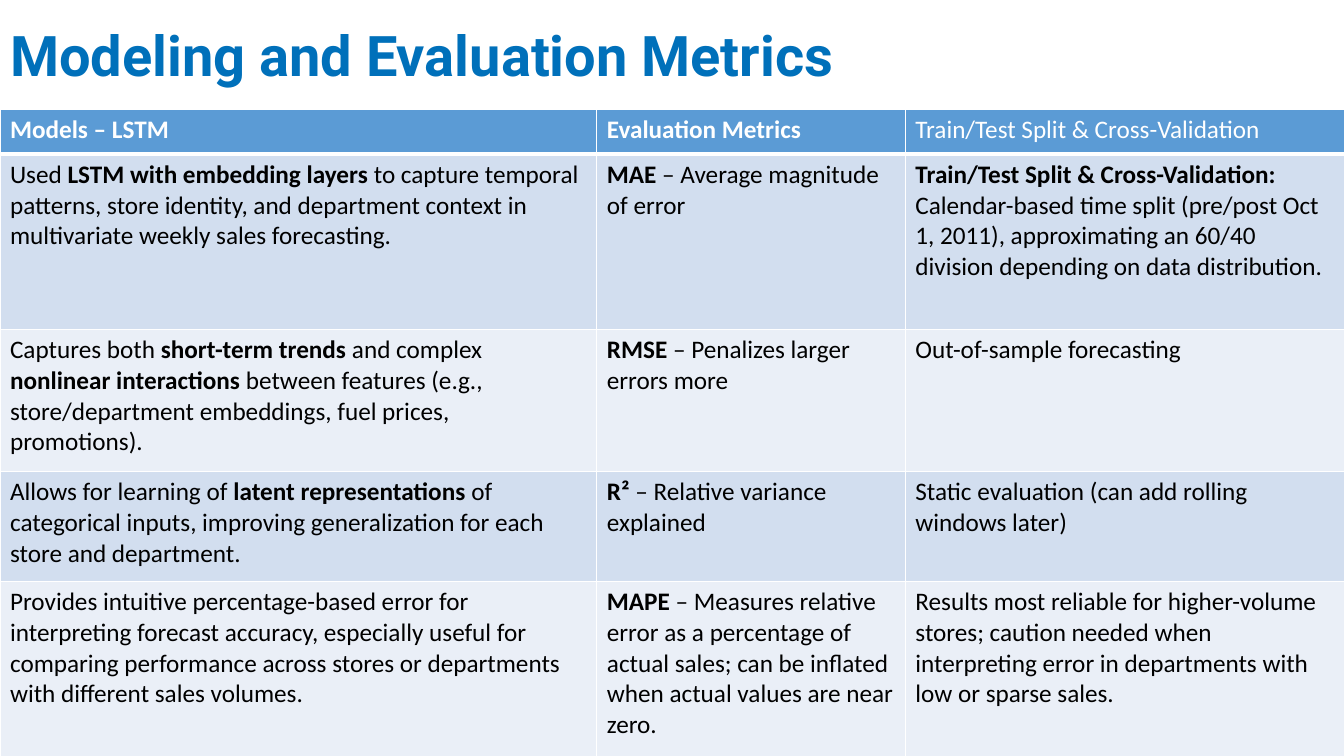
from dataclasses import dataclass

from lxml.etree import SubElement
from pptx import Presentation
from pptx.dml.color import RGBColor
from pptx.enum.text import MSO_ANCHOR, MSO_AUTO_SIZE, PP_ALIGN
from pptx.oxml.ns import qn
from pptx.slide import Slide
from pptx.table import _Cell
from pptx.text.text import Font, _Paragraph
from pptx.util import Inches, Pt

WHITE, BLACK, TITLE_BLUE = "FFFFFF", "000000", "0070BA"
HEADER_BLUE, BAND_DARK, BAND_LIGHT = "5B9BD5", "D2DEEF", "EAEFF7"
COLUMN_WIDTHS = (5.92, 3.06, 4.36)
THIN, THICK = 1, 3


@dataclass(frozen=True)
class Row:
    """A table row; asterisks in its texts enclose bold words."""
    height: float
    models: str
    metrics: str
    validation: str


ROWS = (
    Row(0.44, "*Models – LSTM*", "*Evaluation Metrics*",
        "Train/Test Split & Cross-Validation"),
    Row(1.74,
        "Used *LSTM with embedding layers* to capture temporal patterns, store identity, "
        "and department context in multivariate weekly sales forecasting.",
        "*MAE* – Average magnitude of error",
        "*Train/Test Split & Cross-Validation:\n*Calendar-based time split (pre/post Oct 1, "
        "2011), approximating an 60/40 division depending on data distribution."),
    Row(1.41,
        "Captures both *short-term trends* and complex *nonlinear interactions* between "
        "features (e.g., store/department embeddings, fuel prices, promotions).",
        "*RMSE* – Penalizes larger errors more",
        "Out-of-sample forecasting"),
    Row(1.09,
        "Allows for learning of *latent representations* of categorical inputs, improving "
        "generalization for each store and department.",
        "*R²* – Relative variance explained",
        "Static evaluation (can add rolling windows later)"),
    Row(1.74,
        "Provides intuitive percentage-based error for interpreting forecast accuracy, "
        "especially useful for comparing performance across stores or departments with "
        "different sales volumes.",
        "*MAPE* – Measures relative error as a percentage of actual sales; can be inflated "
        "when actual values are near zero.",
        "Results most reliable for higher-volume stores; caution needed when interpreting "
        "error in departments with low or sparse sales."),
)


def rgb(color: str) -> RGBColor:
    return RGBColor.from_string(color)


def format_font(font: Font, color: str, **values) -> None:
    for name, value in values.items():
        setattr(font, name, value)
    font.color.rgb = rgb(color)


def write_marked_text(paragraph: _Paragraph, text: str, color: str) -> None:
    """Write text whose asterisks switch bold on and off."""
    for index, part in enumerate(text.split("*")):
        if not part:
            continue
        run = paragraph.add_run()
        run.text = part.rstrip("\n")
        format_font(run.font, color, name="Calibri", size=Pt(18), bold=index % 2 == 1)
        if part.endswith("\n"):
            paragraph.add_line_break()


def add_borders(cell: _Cell, top: int, bottom: int) -> None:
    properties = cell._tc.get_or_add_tcPr()
    for side, width in {"L": THIN, "R": THIN, "T": top, "B": bottom}.items():
        line = SubElement(properties, qn(f"a:ln{side}"), w=str(Pt(width)))
        SubElement(SubElement(line, qn("a:solidFill")), qn("a:srgbClr"), val=WHITE)


def add_title(slide: Slide) -> None:
    title = slide.shapes.title
    title.left, title.top = Inches(0), Inches(-0.15)
    title.width, title.height = Inches(9.43), Inches(1.45)
    frame = title.text_frame
    frame.text = "Modeling and Evaluation Metrics"
    frame_format = {"word_wrap": True, "auto_size": MSO_AUTO_SIZE.NONE,
                    "vertical_anchor": MSO_ANCHOR.MIDDLE}
    for name, value in frame_format.items():
        setattr(frame, name, value)
    heading = frame.paragraphs[0]
    heading.alignment = PP_ALIGN.LEFT
    heading.line_spacing = 0.9
    format_font(heading.runs[0].font, TITLE_BLUE, name="Roboto", size=Pt(40), bold=True)


def add_metrics_table(slide: Slide) -> None:
    table = slide.shapes.add_table(
        len(ROWS), len(COLUMN_WIDTHS), Inches(0), Inches(1.09),
        Inches(sum(COLUMN_WIDTHS)), Inches(sum(row.height for row in ROWS))).table
    for column, width in zip(table.columns, COLUMN_WIDTHS):
        column.width = Inches(width)
    for index, row in enumerate(ROWS):
        table.rows[index].height = Inches(row.height)
        is_header = index == 0
        band = HEADER_BLUE if is_header else BAND_DARK if index % 2 else BAND_LIGHT
        for column_index, text in enumerate((row.models, row.metrics, row.validation)):
            cell = table.cell(index, column_index)
            add_borders(cell, top=THICK if index == 1 else THIN,
                        bottom=THICK if is_header else THIN)
            cell.fill.solid()
            cell.fill.fore_color.rgb = rgb(band)
            write_marked_text(cell.text_frame.paragraphs[0], text,
                              WHITE if is_header else BLACK)


def main() -> None:
    presentation = Presentation()
    presentation.slide_width, presentation.slide_height = Inches(13.33), Inches(7.5)
    slide = presentation.slides.add_slide(presentation.slide_layouts[5])
    add_metrics_table(slide)
    add_title(slide)
    presentation.save("out.pptx")


if __name__ == "__main__":
    main()
